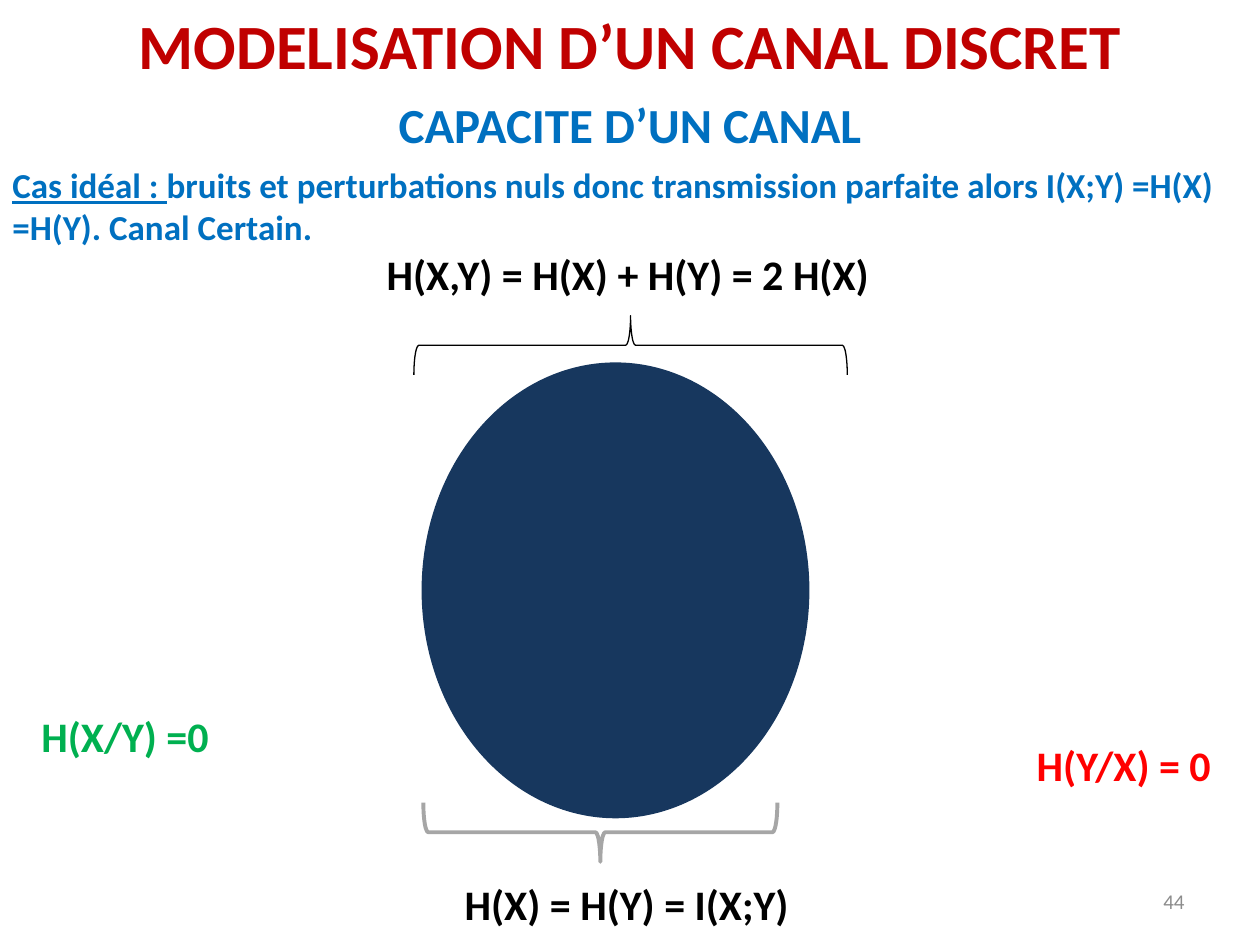
from pptx import Presentation
from pptx.dml.color import RGBColor
from pptx.enum.shapes import MSO_SHAPE
from pptx.enum.text import MSO_ANCHOR, PP_ALIGN
from pptx.util import Inches, Pt

LEFT, CENTER, RIGHT = PP_ALIGN.LEFT, PP_ALIGN.CENTER, PP_ALIGN.RIGHT
TOP, MIDDLE = MSO_ANCHOR.TOP, MSO_ANCHOR.MIDDLE
OVAL = MSO_SHAPE.OVAL
LEFT_BRACE, RIGHT_BRACE = MSO_SHAPE.LEFT_BRACE, MSO_SHAPE.RIGHT_BRACE

COLORS = {
    "title": "C00000",
    "heading": "0070C0",
    "black": "000000",
    "green": "00B050",
    "red": "FF0000",
    "navy": "17375E",
    "gray": "A6A6A6",
    "number": "8C8C8C",
}


class SlideBuilder:
    font = "Calibri"

    def __init__(self, slide):
        self.slide = slide

    def color(self, name):
        return RGBColor.from_string(COLORS[name])

    def text(self, place, words, size, color, align=LEFT, anchor=TOP,
             bold=True, wrap=True, underlined=""):
        box = self.slide.shapes.add_textbox(*map(Inches, place))
        frame = box.text_frame
        frame.word_wrap = wrap
        frame.vertical_anchor = anchor
        para = frame.paragraphs[0]
        para.alignment = align
        for part in filter(None, (underlined, words)):
            span = para.add_run()
            span.text = part
            span.font.name = self.font
            span.font.size = Pt(size)
            span.font.bold = bold
            span.font.underline = part == underlined
            span.font.color.rgb = self.color(color)

    def formula(self, place, words, color="black"):
        self.text(place, words, 24, color, wrap=False)

    def shape(self, kind, place, line, width, fill=None, rotation=0):
        shape = self.slide.shapes.add_shape(kind, *map(Inches, place))
        shape.shadow.inherit = False
        shape.rotation = rotation
        shape.line.color.rgb = self.color(line)
        shape.line.width = Pt(width)
        if fill:
            shape.fill.solid()
            shape.fill.fore_color.rgb = self.color(fill)
        else:
            shape.fill.background()


def main():
    deck = Presentation()
    deck.slide_width, deck.slide_height = Inches(10), Inches(7.5)
    page = SlideBuilder(deck.slides.add_slide(deck.slide_layouts[6]))

    page.text((7.17, 6.95, 2.33, 0.4), "44", 12, "number",
              RIGHT, MIDDLE, bold=False)
    page.shape(OVAL, (3.36, 2.89, 3.05, 3.59), "navy", 2, fill="navy")
    page.text((0, 0.7, 10, 0.88), "CAPACITE D’UN CANAL", 28, "heading", CENTER)
    page.shape(LEFT_BRACE, (4.53, 5.2, 0.47, 2.81), "gray", 2.25, rotation=270)
    page.formula((3.59, 6.92, 2.97, 0.5), "H(X) = H(Y) = I(X;Y)")
    page.shape(RIGHT_BRACE, (4.77, 1.02, 0.47, 3.44), "black", 0.75, rotation=270)
    page.formula((2.97, 1.92, 4.14, 0.5), "H(X,Y) = H(X) + H(Y) = 2 H(X)")
    page.formula((0.23, 5.59, 1.56, 0.5), "H(X/Y) =0", "green")
    page.formula((8.13, 5.82, 1.64, 0.5), "H(Y/X) = 0", "red")
    page.text((0, 1.25, 10, 0.77),
              "bruits et perturbations nuls donc transmission parfaite alors "
              "I(X;Y) =H(X) =H(Y). Canal Certain.",
              20, "heading", underlined="Cas idéal : ")
    page.text((0, 0, 10, 0.71), "MODELISATION D’UN CANAL DISCRET",
              36, "title", CENTER)

    deck.save("out.pptx")


if __name__ == "__main__":
    main()
